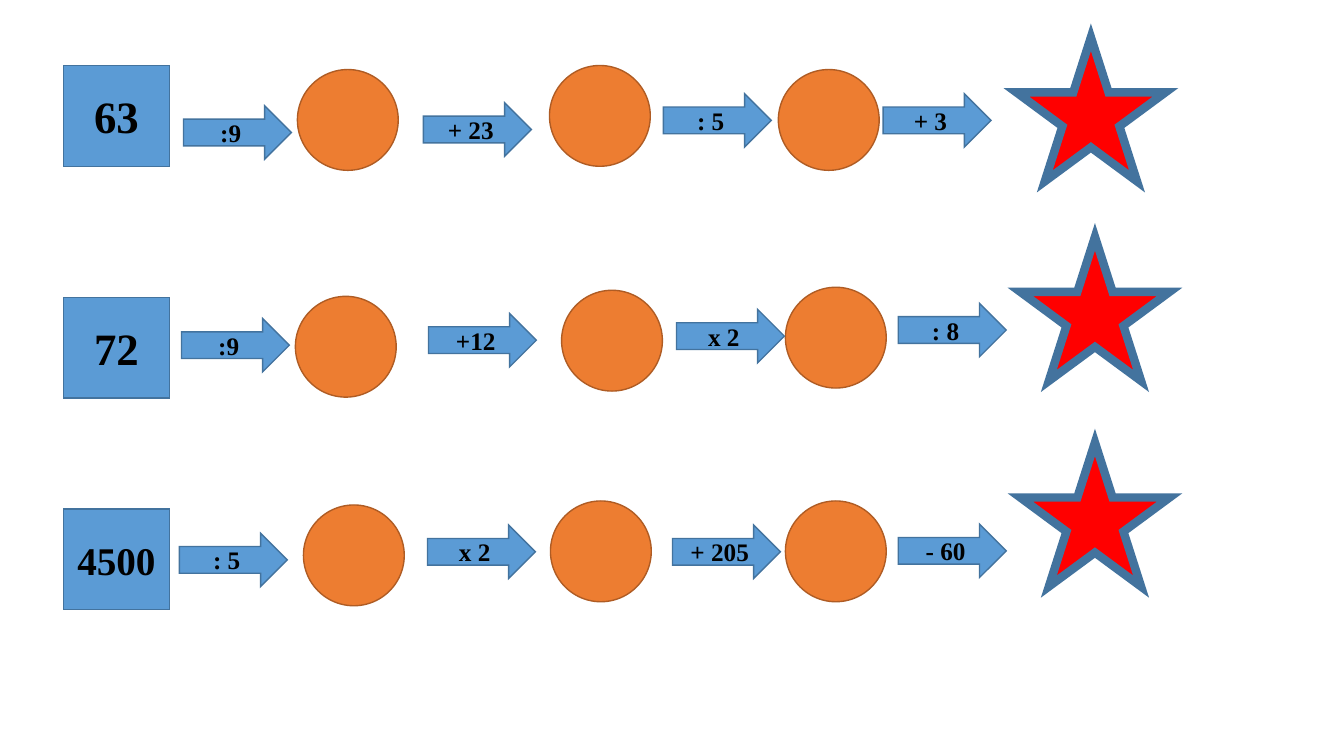
"""Slide with three arithmetic chains running from a number to a star."""
from pptx import Presentation
from pptx.dml.color import RGBColor
from pptx.enum.shapes import MSO_SHAPE as SHAPE
from pptx.enum.text import MSO_ANCHOR, PP_ALIGN
from pptx.oxml.ns import qn
from pptx.util import Pt
from lxml import etree

CHAINS = [
    {"start": ("63", 32, 65),
     "steps": [(":9", 182, 105), ("+ 23", 420, 102), (": 5", 658, 93), ("+ 3", 876, 93)],
     "circles": [(295, 69), (545, 65), (772, 69)],
     "star": (1008, 37)},
    {"start": ("72", 32, 295),
     "steps": [(":9", 180, 316), ("+12", 425, 311), ("х 2", 671, 307), (": 8", 891, 301)],
     "circles": [(293, 294), (557, 288), (779, 285)],
     "star": (1012, 235)},
    {"start": ("4500", 28, 505),
     "steps": [(": 5", 178, 529), ("х 2", 424, 521), ("+ 205", 667, 521), ("- 60", 891, 520)],
     "circles": [(301, 501), (546, 497), (779, 497)],
     "star": (1012, 439)},
]

PX = 9144
SLIDE_SIZE = (1333, 750)
START_LEFT = 63
START_SIZE = (105, 100)
STEP_SIZE = (107, 53)
CIRCLE_SIZE = (100, 100)
STAR_SIZE = (148, 143)
STEP_PT = 18
FONT = "Times New Roman"

BLUE = RGBColor(0x5B, 0x9B, 0xD5)
DARK_BLUE = RGBColor(0x43, 0x73, 0x9E)
ORANGE = RGBColor(0xED, 0x7D, 0x31)
BROWN = RGBColor(0xAF, 0x5C, 0x24)
RED = RGBColor(0xFF, 0x00, 0x00)
BLACK = RGBColor(0x00, 0x00, 0x00)


def add_figure(slide, kind, pos, size, fill, line, line_pt=1):
    sp = slide.shapes.add_shape(kind, *(v * PX for v in pos + size))
    sp.shadow.inherit = False
    sp.fill.solid()
    sp.fill.fore_color.rgb = fill
    sp.line.color.rgb = line
    sp.line.width = Pt(line_pt)
    ln = sp._element.spPr.find(qn("a:ln"))
    etree.SubElement(ln, qn("a:miter"), lim="800000")
    return sp


def add_label(sp, text, size):
    tf = sp.text_frame
    tf.word_wrap = True
    tf.vertical_anchor = MSO_ANCHOR.MIDDLE
    p = tf.paragraphs[0]
    p.alignment = PP_ALIGN.CENTER
    r = p.add_run()
    r.text = text
    r.font.name = FONT
    r.font.size = Pt(size)
    r.font.bold = True
    r.font.color.rgb = BLACK


def add_chain(slide, chain):
    text, size, top = chain["start"]
    sp = add_figure(slide, SHAPE.RECTANGLE, (START_LEFT, top), START_SIZE, BLUE, DARK_BLUE)
    add_label(sp, text, size)
    for pos in chain["circles"]:
        add_figure(slide, SHAPE.OVAL, pos, CIRCLE_SIZE, ORANGE, BROWN)
    for text, *pos in chain["steps"]:
        sp = add_figure(slide, SHAPE.RIGHT_ARROW, tuple(pos), STEP_SIZE, BLUE, DARK_BLUE)
        add_label(sp, text, STEP_PT)
    add_figure(slide, SHAPE.STAR_5_POINT, chain["star"], STAR_SIZE, RED, DARK_BLUE, 6)


def main():
    prs = Presentation()
    prs.slide_width, prs.slide_height = (v * PX for v in SLIDE_SIZE)
    slide = prs.slides.add_slide(prs.slide_layouts[6])
    for chain in CHAINS:
        add_chain(slide, chain)
    prs.save("out.pptx")


if __name__ == "__main__":
    main()
